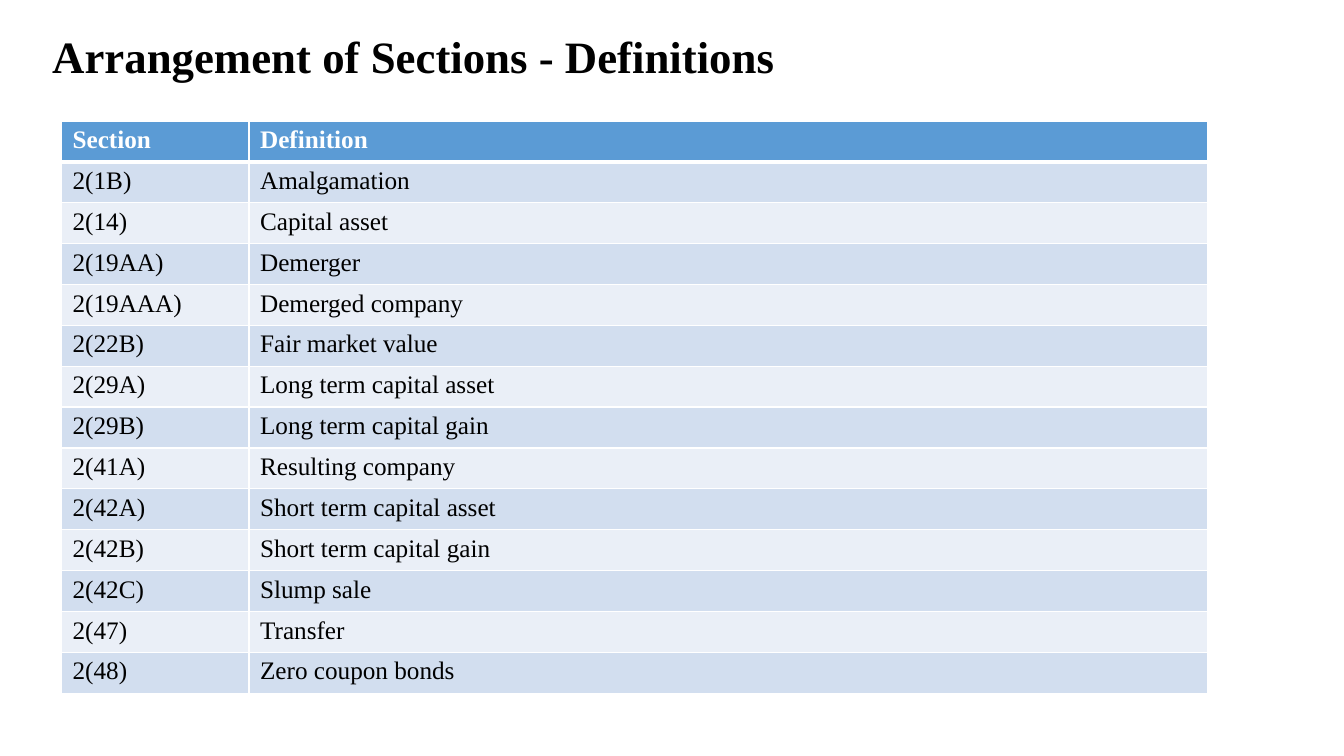
import lxml.etree
import pptx
import pptx.dml.color
import pptx.enum.text
import pptx.oxml.ns
import pptx.util

RGBColor = pptx.dml.color.RGBColor
BLACK = RGBColor(0x00, 0x00, 0x00)
WHITE = RGBColor(0xFF, 0xFF, 0xFF)
BLUE = RGBColor(0x5B, 0x9B, 0xD5)
BANDS = RGBColor(0xEA, 0xEF, 0xF7), RGBColor(0xD2, 0xDE, 0xEF)

TERMS = [
    ("Section", "Definition"),
    ("2(1B)", "Amalgamation"),
    ("2(14)", "Capital asset"),
    ("2(19AA)", "Demerger"),
    ("2(19AAA)", "Demerged company"),
    ("2(22B)", "Fair market value"),
    ("2(29A)", "Long term capital asset"),
    ("2(29B)", "Long term capital gain"),
    ("2(41A)", "Resulting company"),
    ("2(42A)", "Short term capital asset"),
    ("2(42B)", "Short term capital gain"),
    ("2(42C)", "Slump sale"),
    ("2(47)", "Transfer"),
    ("2(48)", "Zero coupon bonds"),
]


class Page:
    """One slide, with lengths given as percentages of its size."""

    face = "Times New Roman"

    def __init__(self, deck):
        self.wide, self.high = deck.slide_width, deck.slide_height
        self.slide = deck.slides.add_slide(deck.slide_layouts[6])

    def across(self, share):
        return round(self.wide * share / 100)

    def down(self, share):
        return round(self.high * share / 100)

    def area(self, left, top, width, height):
        return self.across(left), self.down(top), self.across(width), self.down(height)

    def label(self, para, text, color, **style):
        para.text = text
        for name, value in {"name": self.face, **style}.items():
            setattr(para.font, name, value)
        para.font.color.rgb = color

    def title(self, text, *spot):
        frame = self.slide.shapes.add_textbox(*self.area(*spot)).text_frame
        frame.word_wrap = True
        frame.vertical_anchor = pptx.enum.text.MSO_ANCHOR.MIDDLE
        para = frame.paragraphs[0]
        para.line_spacing = 0.9
        self.label(para, text, BLACK, size=pptx.util.Pt(32), bold=True)

    def edge(self, cell, sides):
        """Draw white borders; sides maps L, R, T, B, in that order, to points."""
        props = cell._tc.get_or_add_tcPr()
        for place, (side, points) in enumerate(sides.items()):
            line = lxml.etree.Element(pptx.oxml.ns.qn("a:ln" + side), w=str(pptx.util.Pt(points)))
            fill = lxml.etree.SubElement(line, pptx.oxml.ns.qn("a:solidFill"))
            lxml.etree.SubElement(fill, pptx.oxml.ns.qn("a:srgbClr"), val=str(WHITE))
            props.insert(place, line)

    def table(self, rows, left, top, widths, height):
        spot = self.area(left, top, sum(widths), height)
        grid = self.slide.shapes.add_table(len(rows), len(widths), *spot).table
        for col, width in zip(grid.columns, widths):
            col.width = self.across(width)
        for r, row in enumerate(rows):
            head = r == 0
            grid.rows[r].height = self.down(height / len(rows))
            for c, text in enumerate(row):
                cell = grid.cell(r, c)
                cell.fill.solid()
                cell.fill.fore_color.rgb = BLUE if head else BANDS[r % 2]
                self.label(cell.text_frame.paragraphs[0], text, WHITE if head else BLACK,
                           size=pptx.util.Pt(18), bold=head)
                cell.margin_left = cell.margin_right = pptx.util.Inches(0.11)
                self.edge(cell, {"L": 1, "R": 1, "T": 3 if r == 1 else 1, "B": 3 if head else 1})


def main():
    deck = pptx.Presentation()
    deck.slide_width, deck.slide_height = pptx.util.Inches(13.33), pptx.util.Inches(7.5)
    page = Page(deck)
    page.title("Arrangement of Sections - Definitions", 3.15, 1.47, 67.37, 12.67)
    page.table(TERMS, 4.58, 16, (13.95, 71.35), 75.73)
    deck.save("out.pptx")


if __name__ == "__main__":
    main()
